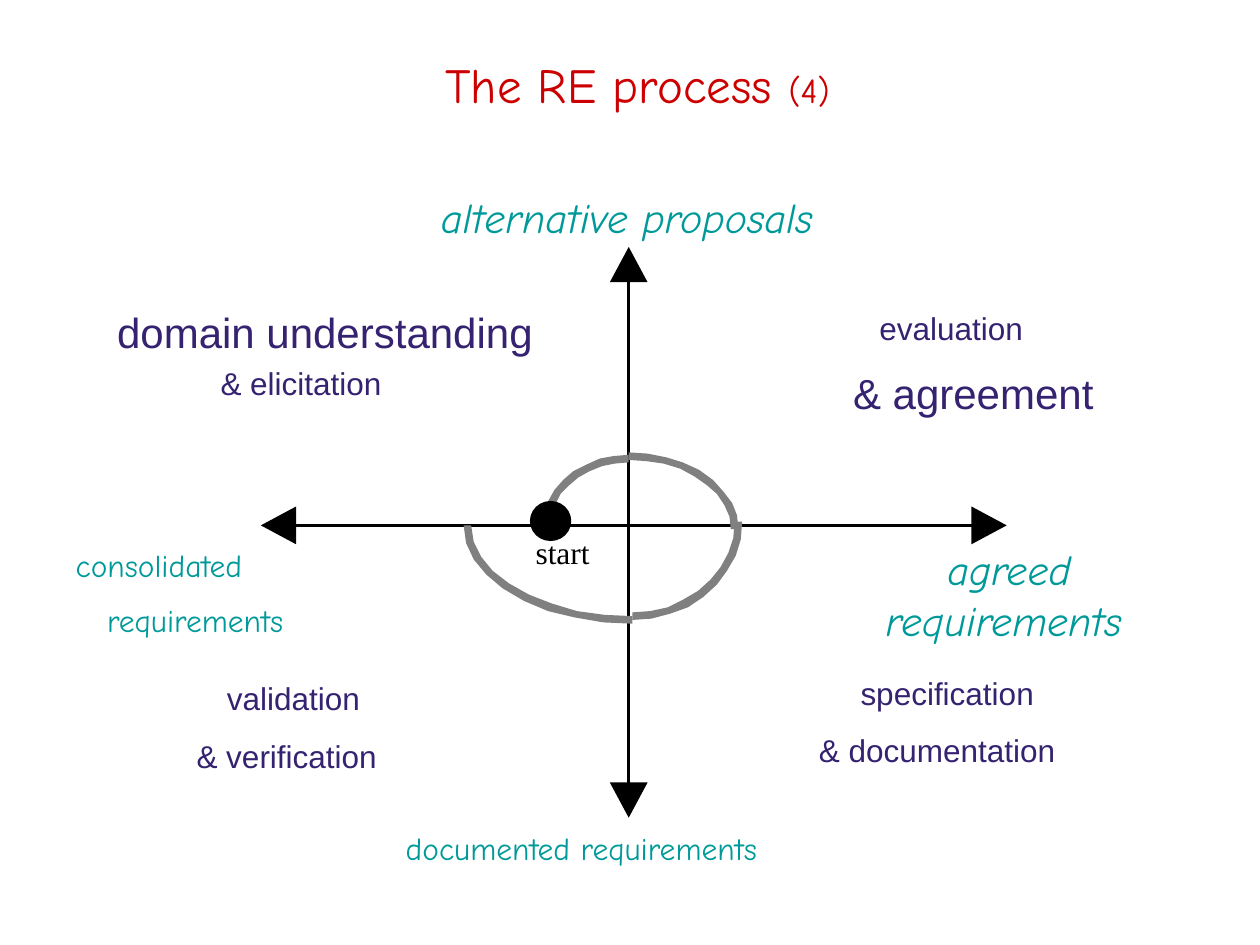
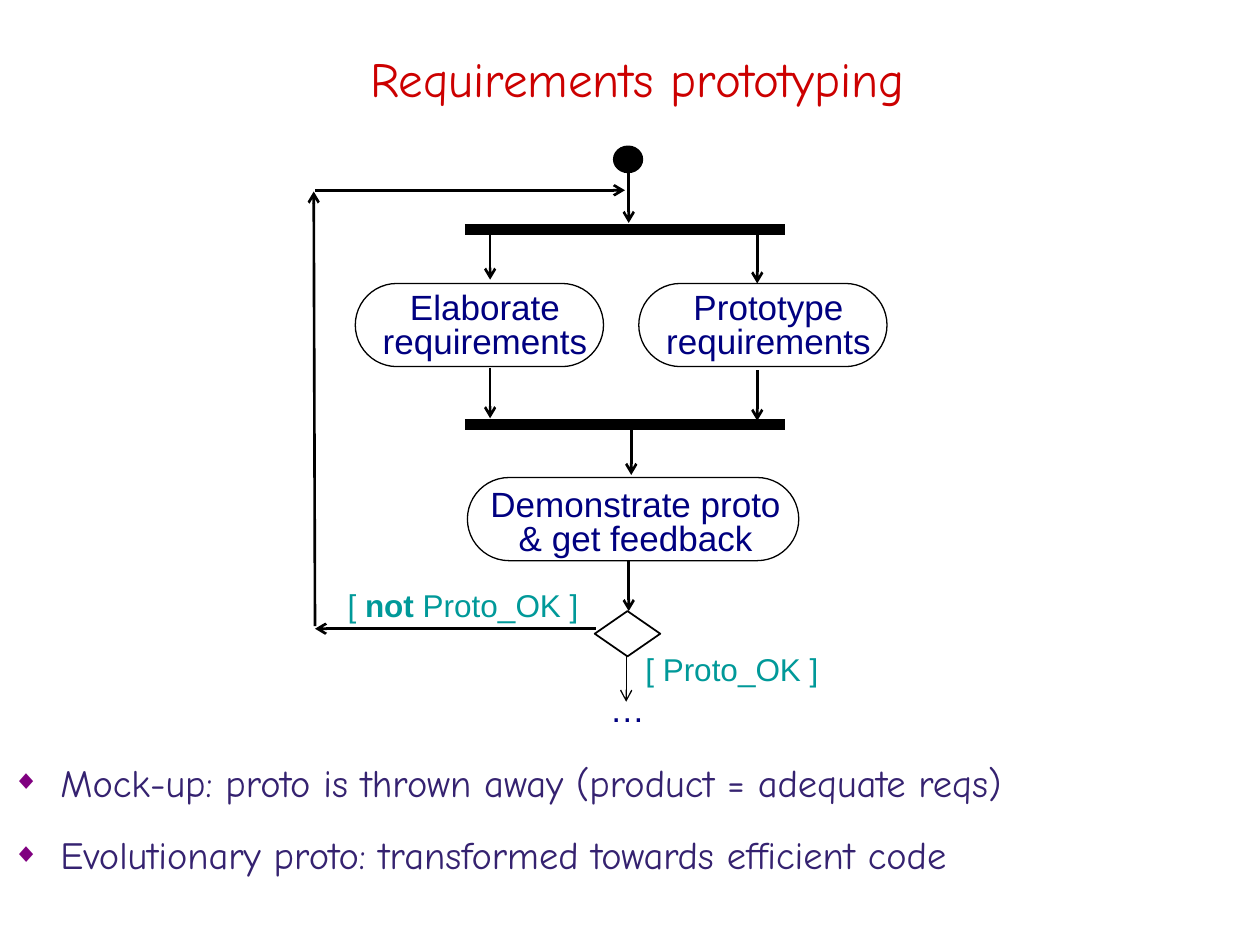
import math

from lxml import etree
from pptx import Presentation
from pptx import util as u
from pptx.dml import color
from pptx.enum import shapes, text
from pptx.oxml import ns

UNIT = u.Cm(2.54) // 100

COLOURS = {
    name: color.RGBColor.from_string(value)
    for name, value in {
        "red": "CC0000", "teal": "009999", "indigo": "352270", "navy": "000080",
        "purple": "800080", "grey": "808080", "black": "000000", "white": "FFFFFF",
    }.items()
}
LOOKS = {
    "title": ("red", {"name": "Comic Neue", "size": u.Pt(28)}),
    "list": ("indigo", {"name": "Comic Neue", "size": u.Pt(22)}),
    "activity": ("indigo", {"name": "Arial", "size": u.Pt(18)}),
    "big activity": ("indigo", {"name": "Arial", "size": u.Pt(24)}),
    "product": ("teal", {"name": "Comic Neue", "size": u.Pt(18)}),
    "big product": ("teal", {"name": "Comic Neue", "size": u.Pt(24), "italic": True}),
    "start": ("black", {"name": "Times New Roman", "size": u.Pt(18)}),
    "step": ("navy", {"name": "Arial", "size": u.Pt(20)}),
    "guard": ("teal", {"name": "Arial", "size": u.Pt(18)}),
}
LABEL_FRAME = {
    "margin_left": 0, "margin_top": 0, "margin_right": 0, "margin_bottom": 0,
    "word_wrap": False, "auto_size": text.MSO_AUTO_SIZE.SHAPE_TO_FIT_TEXT,
}
FLOW_FRAME = {
    "margin_left": 2 * UNIT, "margin_top": UNIT, "margin_right": 2 * UNIT,
    "margin_bottom": UNIT, "word_wrap": True,
}
PLACEHOLDER_FRAME = {
    "auto_size": text.MSO_AUTO_SIZE.NONE,
    "vertical_anchor": text.MSO_ANCHOR.MIDDLE,
}


def write(para, words, look, **changes):
    colour, values = LOOKS[look]
    span = para.add_run()
    span.text = words
    span.font.color.rgb = COLOURS[colour]
    for name, value in {**values, **changes}.items():
        setattr(span.font, name, value)


def connect(page, ends, width, arrow=False):
    line = page.shapes.add_connector(
        shapes.MSO_CONNECTOR.STRAIGHT, *[n * UNIT for n in ends])
    line.line.color.rgb = COLOURS["black"]
    line.line.width = u.Pt(width)
    if arrow:
        etree.SubElement(line.line._get_or_add_ln(), ns.qn("a:tailEnd"), type="arrow")
    etree.SubElement(line._element.spPr, ns.qn("a:effectLst"))


deck = Presentation()
deck.slide_width = u.Cm(25.4)
deck.slide_height = u.Cm(19.05)
process = deck.slides.add_slide(deck.slide_layouts[5])
prototyping = deck.slides.add_slide(deck.slide_layouts[1])
process_title = process.shapes.title
prototyping_title = prototyping.shapes.title
body = prototyping.placeholders[1]

for holder, place in [
    (process_title, (33, 25, 946, 83)),
    (prototyping_title, (33, 20, 946, 83)),
    (body, (0, 596, 981, 103)),
]:
    holder.left, holder.top, holder.width, holder.height = [n * UNIT for n in place]
    for name, value in PLACEHOLDER_FRAME.items():
        setattr(holder.text_frame, name, value)

for title, words in [
    (process_title, "The RE process "),
    (prototyping_title, "Requirements prototyping"),
]:
    heading = title.text_frame.paragraphs[0]
    heading.alignment = text.PP_ALIGN.CENTER
    write(heading, words, "title")
write(process_title.text_frame.paragraphs[0], "(4)", "title", size=u.Pt(20))

axis_x, axis_y = 499, 417
axis_top, axis_bottom, axis_left, axis_right = 196, 649, 207, 799
inset = 22
connect(process, (axis_x, axis_top + inset, axis_x, axis_bottom - inset), 2)
connect(process, (axis_right - inset, axis_y, axis_left + inset, axis_y), 2)

outlines = []
head_length, head_half = 28, 15
for tip_x, tip_y, step_x, step_y in [
    (axis_x, axis_top, 0, -1),
    (axis_x, axis_bottom, 0, 1),
    (axis_right, axis_y, 1, 0),
    (axis_left, axis_y, -1, 0),
]:
    base_x = tip_x - step_x * head_length
    base_y = tip_y - step_y * head_length
    across_x, across_y = step_y * head_half, step_x * head_half
    outlines.append(("black", [
        (tip_x, tip_y),
        (base_x + across_x, base_y + across_y),
        (base_x - across_x, base_y - across_y),
    ]))

band, arc_steps = 6, 9
for centre_x, centre_y, radius_x, radius_y, first_angle in [
    (499, 417, 68, 56, 180),
    (499, 420, 87, 61, 270),
    (502, 414, 87, 78, 0),
    (502, 417, 134, 78, 90),
]:
    angles = [math.radians(first_angle + 90 * step / arc_steps)
              for step in range(arc_steps + 1)]
    outer_edge = [(angle, 0) for angle in angles]
    inner_edge = [(angle, band) for angle in reversed(angles)]
    outlines.append(("grey", [
        (round(centre_x + (radius_x - depth) * math.cos(angle)),
         round(centre_y + (radius_y - depth) * math.sin(angle)))
        for angle, depth in outer_edge + inner_edge
    ]))

for colour, points in outlines:
    builder = process.shapes.build_freeform(*points[0], scale=UNIT)
    builder.add_line_segments(points[1:], close=True)
    outline = builder.convert_to_shape()
    outline.shadow.inherit = False
    outline.fill.solid()
    outline.fill.fore_color.rgb = COLOURS[colour]
    outline.line.fill.background()

label_height = 40
for left, top, width, words, look in [
    (425, 423, 61, "start", "start"),
    (93, 243, 330, "domain understanding", "big activity"),
    (175, 289, 171, "& elicitation", "activity"),
    (698, 245, 152, "evaluation", "activity"),
    (677, 292, 191, "& agreement", "big activity"),
    (350, 152, 326, "alternative proposals", "big product"),
    (752, 431, 107, "agreed", "big product"),
    (703, 472, 206, "requirements", "big product"),
    (322, 658, 403, "documented requirements", "product"),
    (60, 433, 249, "consolidated", "product"),
    (85, 477, 206, "requirements", "product"),
    (683, 535, 184, "specification", "activity"),
    (650, 580, 250, "& documentation", "activity"),
    (180, 539, 141, "validation", "activity"),
    (156, 585, 191, "& verification", "activity"),
]:
    box = process.shapes.add_textbox(
        *[n * UNIT for n in (left, top, width, label_height)])
    for name, value in LABEL_FRAME.items():
        setattr(box.text_frame, name, value)
    write(box.text_frame.paragraphs[0], words, look)

hanging = 38 * UNIT
for index, (words, spacing) in enumerate([
    ("Mock-up: proto is thrown away (product = adequate reqs)", 1.1),
    ("Evolutionary proto: transformed towards efficient code", 1.2),
]):
    para = body.text_frame.add_paragraph() if index else body.text_frame.paragraphs[0]
    para.line_spacing = spacing
    para.space_before = u.Pt(10)
    write(para, words, "list")
    properties = para._p.get_or_add_pPr()
    properties.set("marL", str(hanging))
    properties.set("indent", str(-hanging))
    bullet_colour = etree.SubElement(properties, ns.qn("a:buClr"))
    etree.SubElement(bullet_colour, ns.qn("a:srgbClr"), val=str(COLOURS["purple"]))
    etree.SubElement(properties, ns.qn("a:buSzPct"), val="70000")
    etree.SubElement(properties, ns.qn("a:buChar"), char="◆")

main_x, elaborate_x, prototype_x, loop_x = 499, 389, 601, 250
start_y, loop_y, fork_y, join_y, decision_y = 127, 151, 182, 337, 499
bar_left, bar_right = 369, 623
arrow_length, step_height = 40, 66
pair_top, demonstrate_top, decision_top, decision_bottom = 225, 379, 485, 521
pair_bottom = pair_top + step_height + 1
demonstrate_bottom = demonstrate_top + step_height

preset = shapes.MSO_SHAPE
nodes = [
    (process, preset.OVAL, (422, 399, 30, 29), "black", 2),
    (prototyping, preset.OVAL, (487, 116, 23, 21), "black", 0.75),
    (prototyping, preset.FLOWCHART_DECISION,
     (472, decision_top, 52, decision_bottom - decision_top), "white", 1),
]
captions = [
    ((491, 515, 180, 44), ["[ Proto_OK ]"], "guard"),
    ((260, 464, 215, 44), ["[ *not* Proto_OK ]"], "guard"),
    ((445, 545, 106, 37), ["…"], "step"),
]
for left, top, width, text_width, drop, lines in [
    (282, pair_top, 197, 180, 1, ["Elaborate", "requirements"]),
    (507, pair_top, 197, 180, 1, ["Prototype", "requirements"]),
    (371, demonstrate_top, 263, 241, 3, ["Demonstrate proto", "& get feedback"]),
]:
    nodes.append((prototyping, preset.ROUNDED_RECTANGLE,
                  (left, top, width, step_height), "white", 0.75))
    captions.append(((left + 13, top + drop, text_width, 63), lines, "step"))

for page, kind, place, fill, width in nodes:
    node = page.shapes.add_shape(kind, *[n * UNIT for n in place])
    node.shadow.inherit = False
    node.fill.solid()
    node.fill.fore_color.rgb = COLOURS[fill]
    node.line.color.rgb = COLOURS["black"]
    node.line.width = u.Pt(width)
    if kind == preset.ROUNDED_RECTANGLE:
        node.adjustments[0] = 0.5

for bar_y in (fork_y, join_y):
    connect(prototyping, (bar_left, bar_y, bar_right, bar_y), 6)
for x, top, length, width in [
    (main_x, start_y, 50, 1.5),
    (elaborate_x, fork_y, arrow_length, 1.5),
    (prototype_x, fork_y + 3, arrow_length, 1.5),
    (elaborate_x, pair_bottom, arrow_length, 1.5),
    (prototype_x, pair_bottom + 2, arrow_length, 1.5),
    (main_x + 2, join_y, arrow_length, 1.5),
    (main_x, demonstrate_bottom, arrow_length, 1.5),
    (main_x - 2, decision_bottom, 36, 0.75),
]:
    connect(prototyping, (x, top, x, top + length), width, arrow=True)
for ends in [
    (473, decision_y, loop_x, decision_y),
    (loop_x, decision_y - 2, loop_x - 1, loop_y + 1),
    (loop_x, loop_y, main_x - 3, loop_y),
]:
    connect(prototyping, ends, 1.5, arrow=True)

for place, lines, look in captions:
    box = prototyping.shapes.add_textbox(*[n * UNIT for n in place])
    for name, value in FLOW_FRAME.items():
        setattr(box.text_frame, name, value)
    for index, words in enumerate(lines):
        para = box.text_frame.add_paragraph() if index else box.text_frame.paragraphs[0]
        para.alignment = text.PP_ALIGN.CENTER
        if index:
            para.line_spacing = 0.8
        for part, piece in enumerate(words.split("*")):
            write(para, piece, look, bold=part % 2 == 1)

deck.save("out.pptx")
